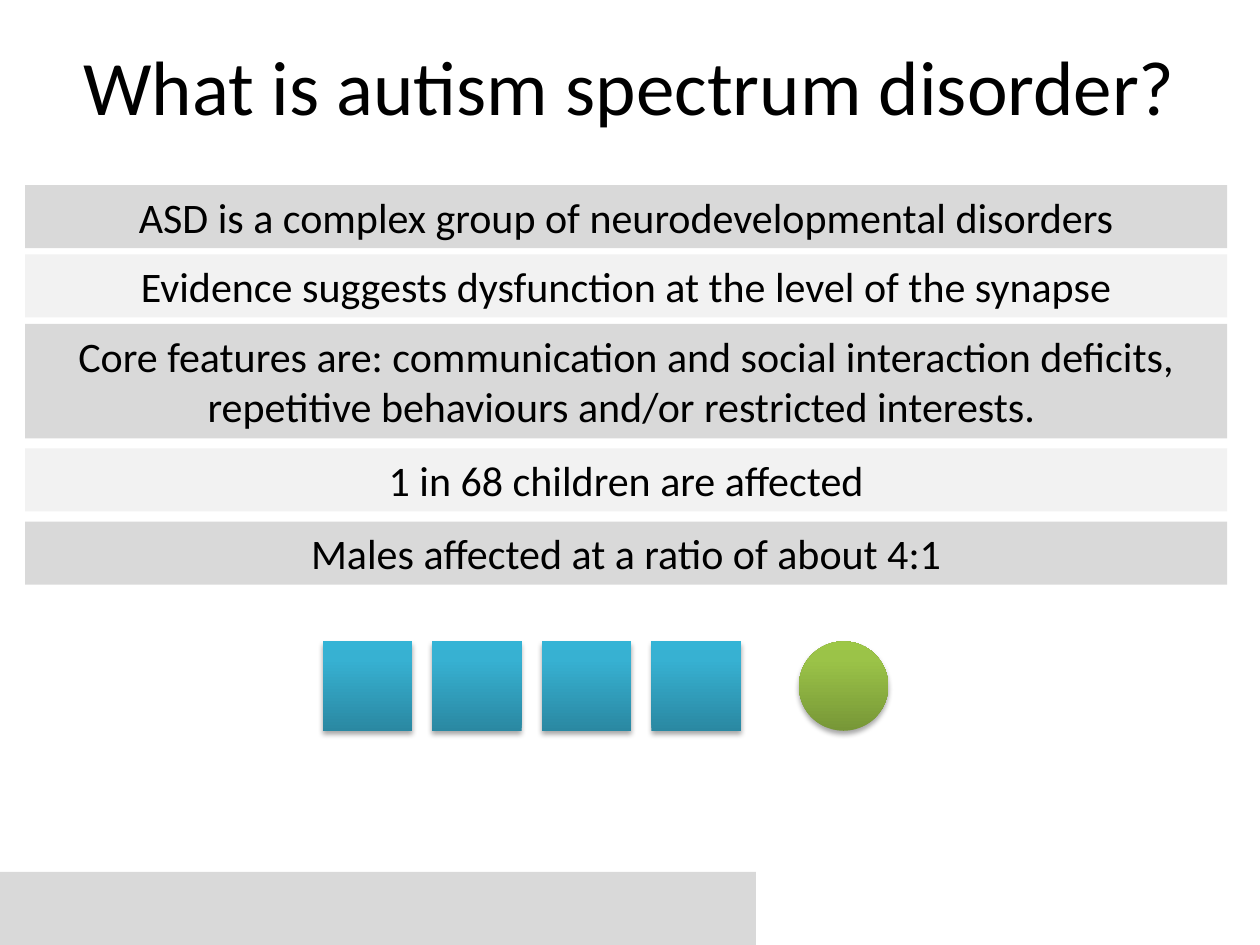
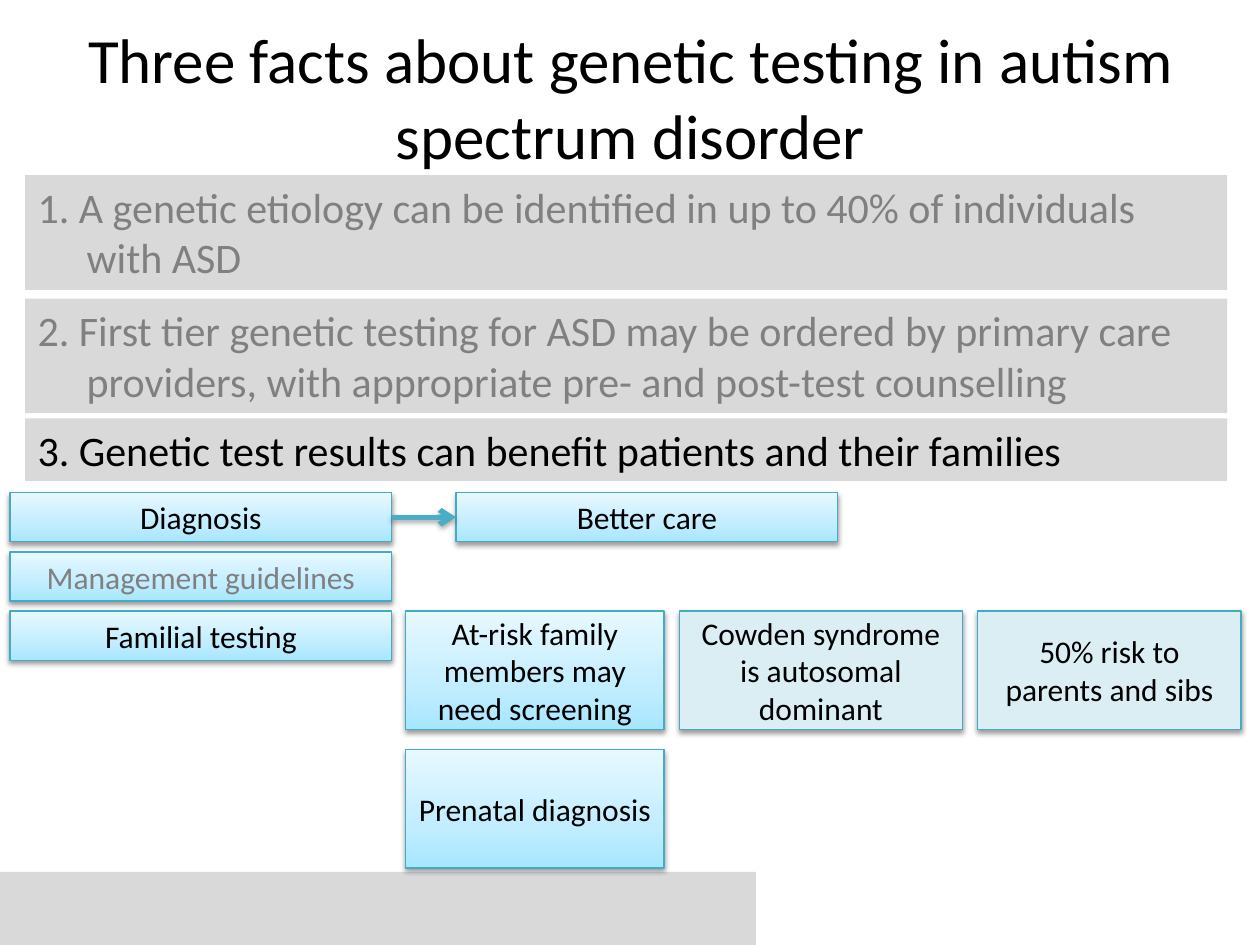
import lxml.etree
import pptx
import pptx.dml.color
import pptx.enum.dml
import pptx.enum.shapes
import pptx.enum.text
import pptx.oxml.ns
import pptx.util

Inches = pptx.util.Inches
Pt = pptx.util.Pt
qn = pptx.oxml.ns.qn
SHAPE = pptx.enum.shapes.MSO_SHAPE
ALIGN = pptx.enum.text.PP_ALIGN
ANCHOR = pptx.enum.text.MSO_ANCHOR
AUTO_SIZE = pptx.enum.text.MSO_AUTO_SIZE

FONT = "Calibri"
BLACK, MUTED = "000000", "808080"
BAND_DARK, BAND_LIGHT = "D9D9D9", "F2F2F2"
PALE_BLUE = "DBEEF4"
CARD_LINE, ARROW_LINE = "46AAC5", "4BACC6"
# Gradients run from bottom to top: (position in percent, colour)
BLUE_GRADIENT = [(0, "2A88A2"), (80, "37B1D2"), (100, "34B4D6")]
GREEN_GRADIENT = [(0, "779737"), (80, "9BC348"), (100, "9DC746")]
CARD_GRADIENT = [(0, "A7E6FF"), (35, "C1EDFF"), (100, "E7F8FF")]

BAND_LEFT, BAND_WIDTH = 0.2, 9.54
ONE_LINE, TWO_LINES = 0.5, 0.91


def rgb(value):
    return pptx.dml.color.RGBColor.from_string(value)


def set_fill(shape, paint):
    """Fill with a hex colour, or with a list of gradient stops."""
    if isinstance(paint, str):
        shape.fill.solid()
        shape.fill.fore_color.rgb = rgb(paint)
        return
    shape.fill.gradient()
    shape.fill.gradient_angle = 90
    stops = shape.element.spPr.find(".//" + qn("a:gsLst"))
    for stop in list(stops):
        stops.remove(stop)
    for position, colour in paint:
        stop = lxml.etree.SubElement(stops, qn("a:gs"), pos=str(position * 1000))
        lxml.etree.SubElement(stop, qn("a:srgbClr"), val=colour)


def add_shadow(properties, opacity, distance):
    """Add a soft shadow straight below to a shape's properties."""
    effects = properties.find(qn("a:effectLst"))
    if effects is None:
        effects = lxml.etree.SubElement(properties, qn("a:effectLst"))
    shadow = lxml.etree.SubElement(
        effects, qn("a:outerShdw"), blurRad=str(Pt(3.1)), dist=str(Pt(distance)),
        dir="5400000", rotWithShape="0")
    colour = lxml.etree.SubElement(shadow, qn("a:srgbClr"), val=BLACK)
    lxml.etree.SubElement(colour, qn("a:alpha"), val=str(opacity * 1000))


def add_plain_shape(slide, box, paint, kind=SHAPE.RECTANGLE, line=None):
    shape = slide.shapes.add_shape(kind, *(Inches(length) for length in box))
    shape.shadow.inherit = False
    set_fill(shape, paint)
    if line:
        shape.line.color.rgb = rgb(line)
        shape.line.width = Pt(0.75)
    else:
        shape.line.fill.background()
    return shape


def write(shape, text, size, colour=BLACK, align=ALIGN.CENTER, anchor=ANCHOR.MIDDLE):
    frame = shape.text_frame
    frame.text = text
    frame.word_wrap = True
    frame.vertical_anchor = anchor
    para = frame.paragraphs[0]
    para.alignment = align
    for span in para.runs:
        span.font.name = FONT
        span.font.size = Pt(size)
        span.font.color.rgb = rgb(colour)
    return para


def start_slide(deck, title, box, size):
    """Add a slide with its title and the grey footer block."""
    slide = deck.slides.add_slide(deck.slide_layouts[5])
    add_plain_shape(slide, (0, 6.92, 6, 0.58), BAND_DARK)
    heading = slide.shapes.title
    heading.left, heading.top, heading.width, heading.height = map(Inches, box)
    write(heading, title, size)
    heading.text_frame.auto_size = AUTO_SIZE.NONE
    return slide


def add_band(slide, top, height, text, paint=BAND_DARK, colour=BLACK, align=ALIGN.CENTER):
    band = add_plain_shape(slide, (BAND_LEFT, top, BAND_WIDTH, height), paint)
    para = write(band, text, 24, colour, align, ANCHOR.TOP)
    band.text_frame.auto_size = AUTO_SIZE.SHAPE_TO_FIT_TEXT
    return para


def add_fact(slide, top, height, text, colour):
    """Add a numbered band whose second line hangs."""
    para = add_band(slide, top, height, text, colour=colour, align=ALIGN.LEFT)
    properties = para._p.get_or_add_pPr()
    properties.set("marL", str(Inches(0.39)))
    properties.set("indent", str(Inches(-0.39)))


def add_card(slide, box, text, paint=CARD_GRADIENT, colour=BLACK):
    card = add_plain_shape(slide, box, paint, line=CARD_LINE)
    add_shadow(card.element.spPr, 38, 1.6)
    write(card, text, 18, colour)
    return card


def add_arrow(slide, source, target):
    """Join the right side of one card to the left side of another."""
    arrow = slide.shapes.add_connector(
        pptx.enum.shapes.MSO_CONNECTOR.STRAIGHT, 0, 0, 0, 0)
    arrow.begin_connect(source, 3)
    arrow.end_connect(target, 1)
    arrow.line.color.rgb = rgb(ARROW_LINE)
    arrow.line.width = Pt(3)
    lxml.etree.SubElement(arrow.line._get_or_add_ln(), qn("a:tailEnd"), type="arrow")
    add_shadow(arrow.element.spPr, 35, 1.8)


def add_sex_ratio(slide, left, top):
    """Draw four squares and one circle for the 4:1 ratio."""
    size, pitch = 0.71, 0.87
    symbols = [(i * pitch, SHAPE.RECTANGLE, BLUE_GRADIENT) for i in range(4)]
    symbols.append((3.78, SHAPE.OVAL, GREEN_GRADIENT))
    for offset, kind, paint in symbols:
        symbol = add_plain_shape(slide, (left + offset, top, size, size), paint, kind)
        add_shadow(symbol.element.spPr, 35, 1.8)


def add_benefits(slide, left, top):
    """Lay out the benefits of testing, with the details beside them."""
    width, height, pitch = 3.03, 0.39, 0.47
    benefits = [("Diagnosis", BLACK), ("Management guidelines", MUTED),
                ("Familial testing", BLACK)]
    cards = [add_card(slide, (left, top + row * pitch, width, height), text, colour=colour)
             for row, (text, colour) in enumerate(benefits)]
    better_care = add_card(slide, (left + 3.54, top, width, height), "Better care")
    add_arrow(slide, cards[0], better_care)

    detail_left, detail_top = left + 3.14, top + 2 * pitch
    detail_height, gap = 0.94, 0.12
    add_card(slide, (detail_left, detail_top + 1.1, 2.05, detail_height),
             "Prenatal diagnosis")
    for text, detail_width, paint in [
            ("At-risk family members may need screening", 2.05, CARD_GRADIENT),
            ("Cowden syndrome is autosomal dominant", 2.25, PALE_BLUE),
            ("50% risk to parents and sibs", 2.09, PALE_BLUE)]:
        add_card(slide, (detail_left, detail_top, detail_width, detail_height), text, paint)
        detail_left += detail_width + gap


def build_definition(deck):
    slide = start_slide(deck, "What is autism spectrum disorder?", (0.5, 0.05, 9, 1.25), 44)
    statements = [
        (1.47, ONE_LINE, "ASD is a complex group of neurodevelopmental disorders"),
        (2.02, ONE_LINE, "Evidence suggests dysfunction at the level of the synapse"),
        (2.57, TWO_LINES, "Core features are: communication and social interaction deficits, "
                          "repetitive behaviours and/or restricted interests. "),
        (3.56, ONE_LINE, "1 in 68 children are affected"),
        (4.14, ONE_LINE, "Males affected at a ratio of about 4:1"),
    ]
    for index, (top, height, text) in enumerate(statements):
        add_band(slide, top, height, text, BAND_LIGHT if index % 2 else BAND_DARK)
    add_sex_ratio(slide, 2.56, 5.09)


def build_facts(deck):
    slide = start_slide(deck, "Three facts about genetic testing in autism spectrum disorder",
                        (0.43, 0.14, 9.15, 1.25), 36)
    facts = [
        (1.39, TWO_LINES, "1. A genetic etiology can be identified in up to 40% of "
                          "individuals with ASD", MUTED),
        (2.37, TWO_LINES, "2. First tier genetic testing for ASD may be ordered by primary "
                          "care providers, with appropriate pre- and post-test counselling",
         MUTED),
        (3.32, ONE_LINE, "3. Genetic test results can benefit patients and their families",
         BLACK),
    ]
    for fact in facts:
        add_fact(slide, *fact)
    add_benefits(slide, 0.08, 3.91)


def main():
    deck = pptx.Presentation()
    deck.slide_width, deck.slide_height = Inches(10), Inches(7.5)
    build_definition(deck)
    build_facts(deck)
    deck.save("out.pptx")


if __name__ == "__main__":
    main()
